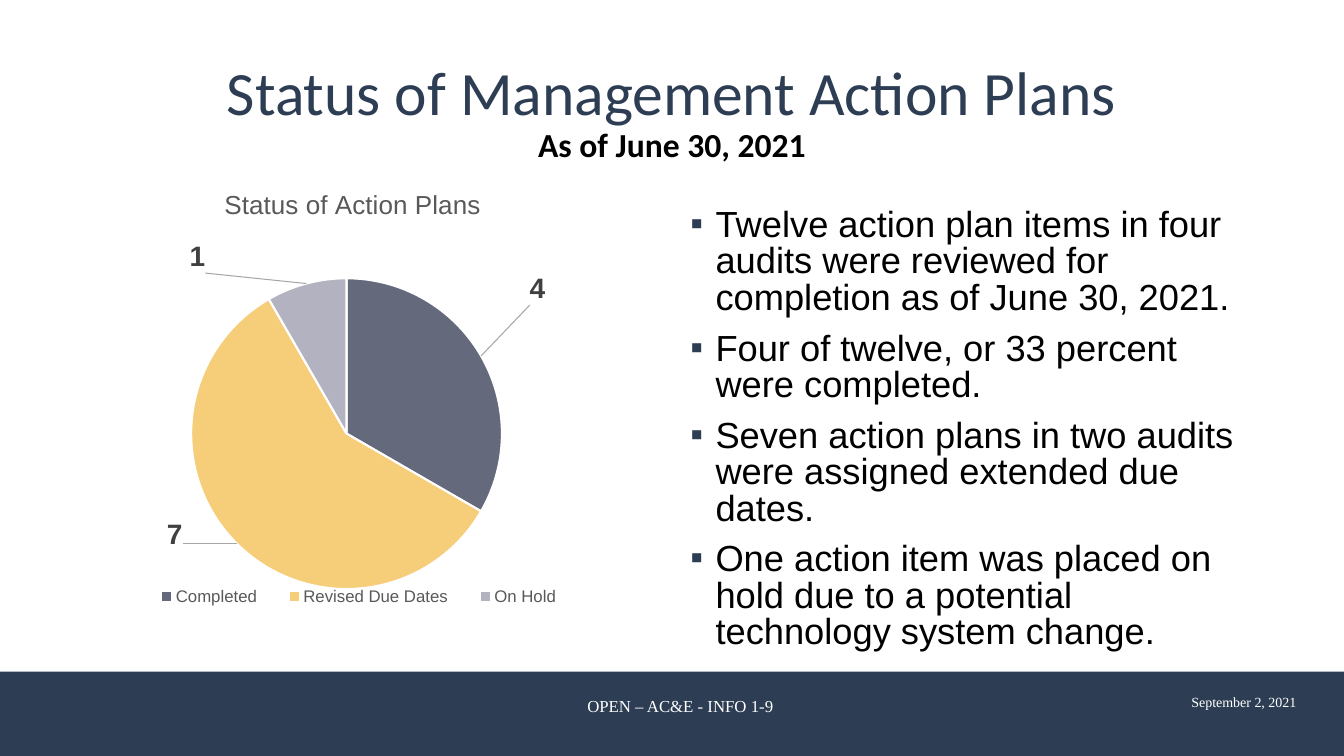
from dataclasses import dataclass
from typing import NamedTuple

from lxml.etree import SubElement
from pptx import Presentation
from pptx.chart.data import CategoryChartData
from pptx.dml.color import RGBColor
from pptx.enum.chart import XL_CHART_TYPE, XL_LABEL_POSITION, XL_LEGEND_POSITION
from pptx.enum.shapes import MSO_SHAPE
from pptx.enum.text import MSO_ANCHOR, PP_ALIGN
from pptx.oxml.ns import qn
from pptx.util import Emu, Inches, Pt


@dataclass(frozen=True)
class Theme:
    navy: str = "2D3D54"
    white: str = "FFFFFF"
    black: str = "000000"
    legend_grey: str = "595959"
    label_grey: str = "404040"
    leader_grey: str = "A6A6A6"
    sans: str = "Arial"
    heading: str = "Calibri"
    serif: str = "Times New Roman"
    title_size: float = 44
    subtitle_size: float = 24
    bullet_size: float = 25.9
    chart_title_size: float = 18.6
    value_size: float = 20
    legend_size: float = 12
    footer_size: float = 12
    date_size: float = 10


class Area(NamedTuple):
    """Position and size in columns and rows of a 160 x 90 grid."""
    column: float
    row: float
    columns: float
    rows: float


class Status(NamedTuple):
    """One slice; shift moves its value away from the rim, in chart shares."""
    name: str
    count: int
    color: str
    shift: tuple[float, float]


class FooterText(NamedTuple):
    text: str
    area: Area
    size: float
    align: PP_ALIGN


THEME = Theme()
WIDTH, HEIGHT = Inches(13.333), Inches(7.5)

STATUSES = [
    Status("Completed", 4, "64697C", (0.07, -0.1)),
    Status("Revised Due Dates", 7, "F6CD79", (-0.08, -0.06)),
    Status("On Hold", 1, "B3B2C0", (-0.16, -0.01)),
]
FINDINGS = [
    "Twelve action plan items in four audits were reviewed for completion as of June 30, 2021.",
    "Four of twelve, or 33 percent were completed.",
    "Seven action plans in two audits were assigned extended due dates.",
    "One action item was placed on hold due to a potential technology system change.",
]
FOOTER = [
    FooterText("September 2, 2021", Area(134, 82, 21.5, 3.2), THEME.date_size, PP_ALIGN.RIGHT),
    FooterText("OPEN – AC&E - INFO 1-9", Area(61.7, 82.2, 38.6, 3.6), THEME.footer_size, PP_ALIGN.CENTER),
]


def place(area: Area) -> list[Emu]:
    column, row = WIDTH / 160, HEIGHT / 90
    return [Emu(round(n * unit)) for n, unit in zip(area, (column, row, column, row))]


def style(font, face: str, size: float, color: str, bold: bool = False) -> None:
    font.name, font.size, font.bold = face, Pt(size), bold
    font.color.rgb = RGBColor.from_string(color)


def add_text(slide, area: Area):
    frame = slide.shapes.add_textbox(*place(area)).text_frame
    frame.word_wrap = True
    return frame


def set_layout(parent, index: int, inner: bool = False, **shares: float) -> None:
    """Give a chart part a manual layout, as shares of the chart."""
    for old in parent.findall(qn("c:layout")):
        parent.remove(old)
    layout = SubElement(parent, qn("c:layout"))
    parent.insert(index, layout)
    manual = SubElement(layout, qn("c:manualLayout"))
    if inner:
        SubElement(manual, qn("c:layoutTarget")).set("val", "inner")
    if "w" in shares:
        for mode in ("xMode", "yMode"):
            SubElement(manual, qn(f"c:{mode}")).set("val", "edge")
    for name, share in shares.items():
        SubElement(manual, qn(f"c:{name}")).set("val", str(share))


def add_footer(slide) -> None:
    band = slide.shapes.add_shape(MSO_SHAPE.RECTANGLE, *place(Area(0, 79.95, 160, 10.05)))
    band.shadow.inherit = False
    band.fill.solid()
    band.fill.fore_color.rgb = RGBColor.from_string(THEME.navy)
    band.line.fill.background()
    for item in FOOTER:
        line = add_text(slide, item.area).paragraphs[0]
        line.text, line.alignment = item.text, item.align
        style(line.runs[0].font, THEME.serif, item.size, THEME.white)


def add_title(slide) -> None:
    frame = add_text(slide, Area(11, 4.8, 138, 17.4))
    frame.vertical_anchor = MSO_ANCHOR.MIDDLE
    heading = frame.paragraphs[0]
    heading.text = "Status of Management Action Plans\vAs of June 30, 2021"
    heading.alignment, heading.line_spacing = PP_ALIGN.CENTER, 0.9
    title, subtitle = heading.runs
    style(title.font, THEME.heading, THEME.title_size, THEME.navy)
    style(subtitle.font, THEME.heading, THEME.subtitle_size, THEME.black, True)


def add_status_pie(slide) -> None:
    data = CategoryChartData()
    data.categories = [status.name for status in STATUSES]
    data.add_series("Series 1", [status.count for status in STATUSES])
    chart = slide.shapes.add_chart(XL_CHART_TYPE.PIE, *place(Area(5, 20, 74, 57)), data).chart
    style(chart.font, THEME.sans, 10, THEME.black)

    # Title, legend and plot area
    chart.has_title = True
    heading = chart.chart_title.text_frame
    heading.text = "Status of Action Plans"
    style(heading.paragraphs[0].runs[0].font, THEME.sans, THEME.chart_title_size, THEME.legend_grey)
    chart.has_legend = True
    legend = chart.legend
    legend.position = XL_LEGEND_POSITION.BOTTOM
    legend.include_in_layout = False
    style(legend.font, THEME.sans, THEME.legend_size, THEME.legend_grey)
    set_layout(legend._element, 1, x=0.15, y=0.86, w=0.72, h=0.07)
    plot = chart.plots[0]
    plot.vary_by_categories = True
    set_layout(plot._element.getparent(), 0, True, x=0.24, y=0.23, w=0.5, h=0.65)

    # Slices and their values
    slices = plot.series[0]
    labels = slices.data_labels
    labels.show_value = True
    style(labels.font, THEME.sans, THEME.value_size, THEME.label_grey, True)
    for index, status in enumerate(STATUSES):
        point = slices.points[index]
        point.format.fill.solid()
        point.format.fill.fore_color.rgb = RGBColor.from_string(status.color)
        point.format.line.color.rgb = RGBColor.from_string(THEME.white)
        point.format.line.width = Pt(1.5)
        value = point.data_label
        style(value.font, THEME.sans, THEME.value_size, THEME.label_grey, True)
        value.position = XL_LABEL_POSITION.OUTSIDE_END
        label = labels._element.findall(qn("c:dLbl"))[index]
        set_layout(label, 1, x=status.shift[0], y=status.shift[1])

    # Leader lines
    for old in labels._element.findall(qn("c:showLeaderLines")):
        labels._element.remove(old)
    SubElement(labels._element, qn("c:showLeaderLines")).set("val", "1")
    leaders = SubElement(labels._element, qn("c:leaderLines"))
    outline = SubElement(SubElement(leaders, qn("c:spPr")), qn("a:ln"), w=str(Pt(0.75)))
    SubElement(SubElement(outline, qn("a:solidFill")), qn("a:srgbClr"), val=THEME.leader_grey)


def add_findings(slide) -> None:
    frame = add_text(slide, Area(81, 24.2, 68, 54))
    frame.text = "\n".join(FINDINGS)
    for index, finding in enumerate(frame.paragraphs):
        finding.line_spacing = 0.84
        if index:
            finding.space_before = Pt(10)
        properties = finding._p.get_or_add_pPr()
        properties.set("marL", str(Inches(0.25)))
        properties.set("indent", str(-Inches(0.25)))
        SubElement(SubElement(properties, qn("a:buClr")), qn("a:srgbClr"), val=THEME.navy)
        SubElement(properties, qn("a:buFont"), typeface=THEME.sans)
        SubElement(properties, qn("a:buChar"), char="▪")
        style(finding.runs[0].font, THEME.sans, THEME.bullet_size, THEME.black)


def main() -> None:
    deck = Presentation()
    deck.slide_width, deck.slide_height = WIDTH, HEIGHT
    slide = deck.slides.add_slide(deck.slide_layouts[6])
    add_footer(slide)
    add_title(slide)
    add_status_pie(slide)
    add_findings(slide)
    deck.save("out.pptx")


if __name__ == "__main__":
    main()
